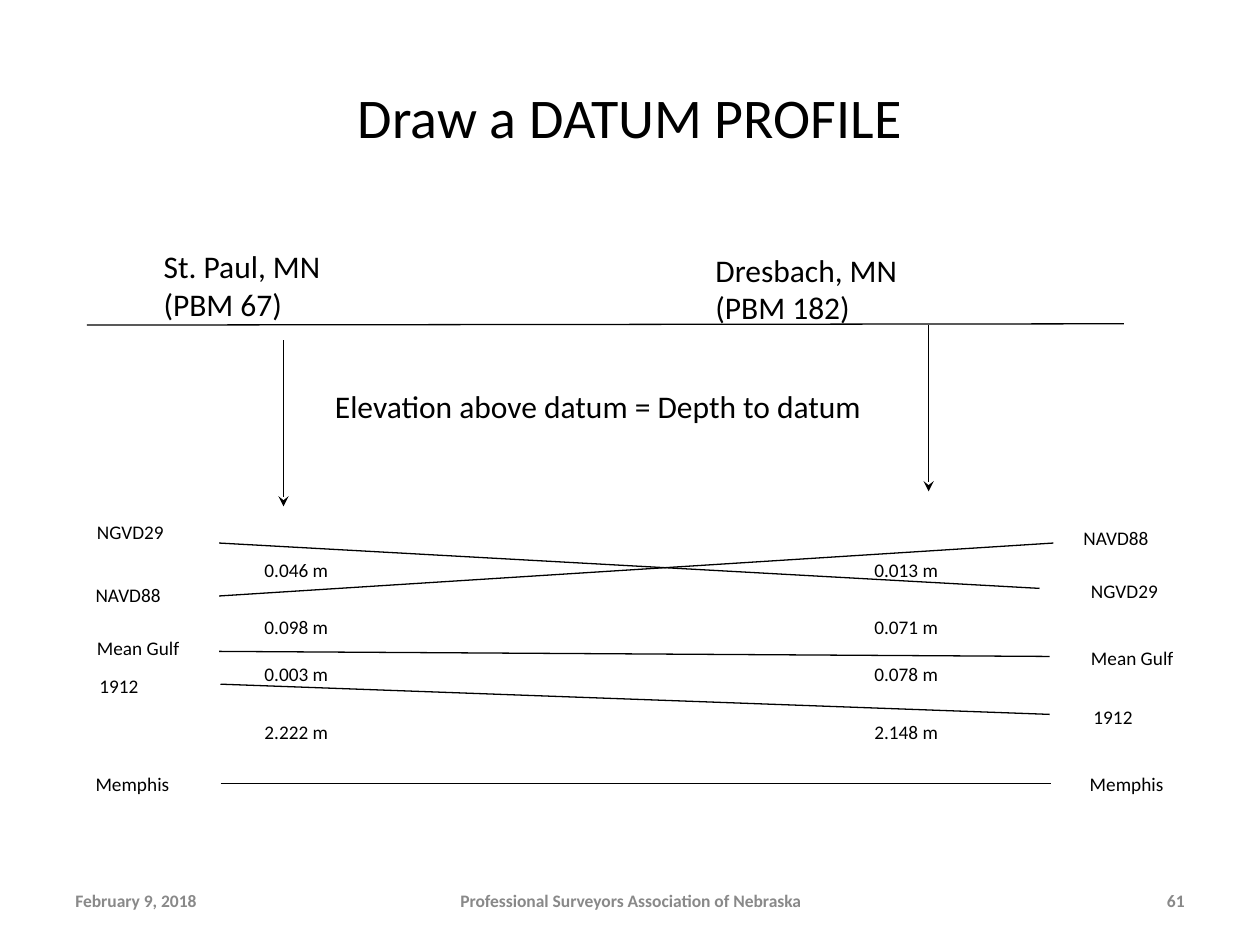
from dataclasses import dataclass

import pptx
import pptx.dml.color
import pptx.enum.shapes
import pptx.enum.text
import pptx.oxml
import pptx.oxml.ns
import pptx.util

Align = pptx.enum.text.PP_ALIGN
Anchor = pptx.enum.text.MSO_ANCHOR

COLORS = {"ink": "000000", "foot": "898989"}
STYLES = {
    "title": {"size": 32, "bold": False, "color": "ink"},
    "head": {"size": 18, "bold": False, "color": "ink"},
    "label": {"size": 11, "bold": False, "color": "ink"},
    "foot": {"size": 10, "bold": True, "color": "foot"},
}

deck = pptx.Presentation()
deck.slide_width = pptx.util.Inches(10)
deck.slide_height = pptx.util.Inches(7.5)
COL = deck.slide_width / 100
ROW = deck.slide_height / 75


@dataclass
class Label:
    text: str
    col: float
    row: float
    cols: float = 10.8
    rows: float = 2.9
    style: str = "label"
    align: Align = Align.LEFT
    anchor: Anchor = Anchor.TOP


@dataclass
class Line:
    col: float
    row: float
    end_col: float
    end_row: float
    arrow: bool = False


def tint(name: str) -> pptx.dml.color.RGBColor:
    return pptx.dml.color.RGBColor.from_string(COLORS[name])


def fill_text(shape, item: Label) -> None:
    place = {
        "left": item.col * COL,
        "top": item.row * ROW,
        "width": item.cols * COL,
        "height": item.rows * ROW,
    }
    for key, size in place.items():
        setattr(shape, key, round(size))
    frame = shape.text_frame
    frame.word_wrap = True
    frame.vertical_anchor = item.anchor
    frame.text = item.text
    style = STYLES[item.style]
    looks = {
        "name": "Calibri",
        "size": pptx.util.Pt(style["size"]),
        "bold": style["bold"],
    }
    for para in frame.paragraphs:
        para.alignment = item.align
        for run in para.runs:
            for key, value in looks.items():
                setattr(run.font, key, value)
            run.font.color.rgb = tint(style["color"])


def draw_label(slide, item: Label) -> None:
    fill_text(slide.shapes.add_textbox(0, 0, 0, 0), item)


def draw_line(slide, item: Line) -> None:
    line = slide.shapes.add_connector(
        pptx.enum.shapes.MSO_CONNECTOR.STRAIGHT,
        round(item.col * COL),
        round(item.row * ROW),
        round(item.end_col * COL),
        round(item.end_row * ROW),
    )
    line.line.color.rgb = tint("ink")
    line.line.width = pptx.util.Pt(0.75)
    if item.arrow:
        tail = pptx.oxml.parse_xml(
            f'<a:tailEnd {pptx.oxml.ns.nsdecls("a")} type="stealth"/>'
        )
        line.line._get_or_add_ln().append(tail)
    line._element.spPr.append(
        pptx.oxml.parse_xml(f'<a:effectLst {pptx.oxml.ns.nsdecls("a")}/>')
    )


TITLE = Label("Draw a DATUM PROFILE", 5, 3, 90, 12.5, "title",
              Align.CENTER, Anchor.MIDDLE)

HEADS = [
    Label("St. Paul, MN\n(PBM 67)", 12, 19.1, 15.8, 5.7, "head"),
    Label("Dresbach, MN\n(PBM 182)", 55.8, 19.4, 17.5, 5.7, "head"),
    Label("Elevation above datum = Depth to datum",
          25.6, 30.2, 44.9, 4, "head"),
]

DATUMS = [
    Label("NGVD29", 6.7, 40.8),
    Label("NAVD88", 6.6, 45.8),
    Label("Mean Gulf", 6.7, 50),
    Label("1912", 6.9, 53),
    Label("Memphis", 6.6, 60.8),
    Label("NAVD88", 85, 41.3),
    Label("NGVD29", 85.6, 45.5),
    Label("Mean Gulf", 85.6, 50.8),
    Label("1912", 85.8, 55.5),
    Label("Memphis", 85.5, 60.8),
]

GAP_ROWS = [43.8, 48.3, 52.1, 56.7]
GAPS = {
    20: ["0.046 m", "0.098 m", "0.003 m", "2.222 m"],
    68.4: ["0.013 m", "0.071 m", "0.078 m", "2.148 m"],
}

FOOTS = [
    Label(text, col, 69.5, cols, 4, "foot", align, Anchor.MIDDLE)
    for text, col, cols, align in [
        ("February 9, 2018", 5, 23.3, Align.LEFT),
        ("Professional Surveyors Association of Nebraska",
         34.2, 31.7, Align.CENTER),
        ("61", 71.7, 23.3, Align.RIGHT),
    ]
]

LINES = [
    Line(6.9, 25.8, 89.2, 25.7),
    Line(22.5, 27, 22.5, 40.2, True),
    Line(73.7, 25.8, 73.7, 39, True),
    Line(17.4, 43.1, 82.5, 46.7),
    Line(17.4, 47.3, 83.6, 43.1),
    Line(17.4, 51.7, 83.3, 52.1),
    Line(17.5, 54.3, 83.3, 56.7),
    Line(17.5, 62.2, 83.4, 62.2),
]


def main() -> None:
    slide = deck.slides.add_slide(deck.slide_layouts[5])
    fill_text(slide.shapes.title, TITLE)
    gaps = [
        Label(text, col, row)
        for col, texts in GAPS.items()
        for text, row in zip(texts, GAP_ROWS)
    ]
    for item in HEADS + DATUMS + gaps + FOOTS:
        draw_label(slide, item)
    for item in LINES:
        draw_line(slide, item)
    deck.save("out.pptx")


if __name__ == "__main__":
    main()
